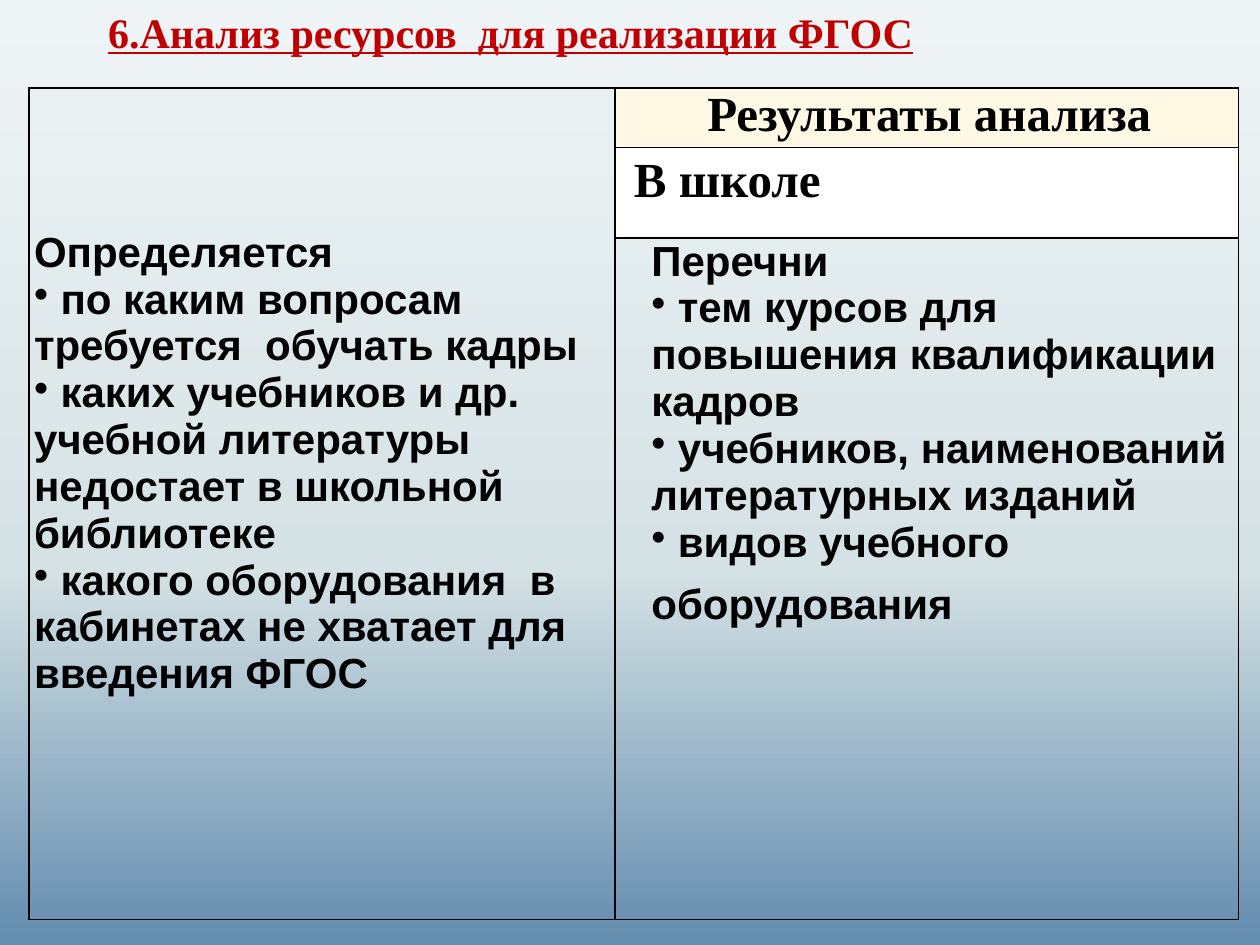
import copy

import pptx
import pptx.dml.color
import pptx.enum.text
import pptx.oxml
import pptx.oxml.ns
import pptx.util

Inches = pptx.util.Inches
Pt = pptx.util.Pt
qn = pptx.oxml.ns.qn
ALIGN = pptx.enum.text.PP_ALIGN
ANCHOR = pptx.enum.text.MSO_ANCHOR
SPACE = 'xmlns:a="http://schemas.openxmlformats.org/drawingml/2006/main"'


def color(code):
    return pptx.dml.color.RGBColor.from_string(code)


def apply(item, values):
    for name, value in values.items():
        setattr(item, name, value)


class Deck:
    serif = "Times New Roman"
    sans = "Arial"
    ink = "000000"

    def __init__(self):
        self.show = pptx.Presentation()
        apply(self.show, {"slide_width": Inches(10), "slide_height": Inches(7.5)})
        self.slide = self.show.slides.add_slide(self.show.slide_layouts[6])

    def back(self, stops):
        fill = self.slide.background.fill
        fill.gradient()
        fill.gradient_angle = 90
        last = list(self.slide.element.iter(qn("a:gs")))[-1]
        last.addnext(copy.deepcopy(last))
        for stop, (place, code) in zip(fill.gradient_stops, stops):
            stop.position = place
            stop.color.rgb = color(code)

    def run(self, para, text, size, face, code=ink, **extra):
        run = para.add_run()
        run.text = text
        apply(run.font, {"size": Pt(size), "name": face, "bold": True, **extra})
        run.font.color.rgb = color(code)

    def title(self, text, box):
        frame = self.slide.shapes.add_textbox(*map(Inches, box)).text_frame
        apply(frame, {"word_wrap": False, "vertical_anchor": ANCHOR.MIDDLE})
        self.run(frame.paragraphs[0], text, 24, self.serif, "C00000", underline=True)

    def table(self, left, top, cols, rows):
        box = map(Inches, (left, top, sum(cols), sum(rows)))
        table = self.slide.shapes.add_table(len(rows), len(cols), *box).table
        apply(table, {"first_row": False, "horz_banding": False})
        for col, width in zip(table.columns, cols):
            col.width = Inches(width)
        for row, height in zip(table.rows, rows):
            row.height = Inches(height)
        sides = ("left", "right", "top", "bottom")
        for cell in table.iter_cells():
            apply(cell, {f"margin_{side}": 0 for side in sides})
            cell.fill.background()
            self.border(cell)
        return table

    def border(self, cell):
        props = cell._tc.get_or_add_tcPr()
        for spot, side in enumerate("LRTB"):
            props.insert(spot, pptx.oxml.parse_xml(
                f'<a:ln{side} {SPACE} w="12700"><a:solidFill>'
                f'<a:srgbClr val="{self.ink}"/></a:solidFill></a:ln{side}>'))

    def paint(self, cell, code):
        cell.fill.solid()
        cell.fill.fore_color.rgb = color(code)

    def indent(self, para, left):
        props = para._p.get_or_add_pPr()
        props.set("marL", str(Inches(left)))
        props.set("indent", "0")
        return props

    def head(self, cell, text, code, align):
        self.paint(cell, code)
        para = cell.text_frame.paragraphs[0]
        para.alignment = align
        self.indent(para, 0.04)
        if align == ALIGN.LEFT:
            self.run(para, " ", 32, self.serif)
        self.run(para, text, 28, self.serif)

    def points(self, cell, lead, items, left):
        frame = cell.text_frame
        for spot, text in enumerate([lead] + items):
            para = frame.add_paragraph() if spot else frame.paragraphs[0]
            props = self.indent(para, left)
            if spot:
                props.append(pptx.oxml.parse_xml(f'<a:buChar {SPACE} char="•"/>'))
                text = " " + text
            self.run(para, text, 24, self.sans)
        return para


def main():
    deck = Deck()
    deck.back([(0, "638CAE"), (0.4, "D5E2E5"), (1, "EFF4F6")])
    deck.title("6.Анализ ресурсов  для реализации ФГОС", (0.76, 0, 6.6, 0.5))

    table = deck.table(0.23, 0.7, [4.65, 4.95], [0.47, 0.72, 5.41])
    topic = table.cell(0, 0)
    topic.merge(table.cell(2, 0))
    topic.margin_top = Inches(1.12)
    deck.points(topic, "Определяется", [
        "по каким вопросам требуется  обучать кадры",
        "каких учебников и др. учебной литературы недостает в школьной библиотеке",
        "какого оборудования  в кабинетах не хватает для введения ФГОС",
    ], 0.04)
    deck.head(table.cell(0, 1), "Результаты анализа", "FEF8E4", ALIGN.CENTER)
    deck.head(table.cell(1, 1), "В школе", "FFFFFF", ALIGN.LEFT)
    last = deck.points(table.cell(2, 1), "Перечни", [
        "тем курсов для повышения квалификации кадров",
        "учебников, наименований литературных изданий",
        "видов учебного оборудования",
    ], 0.29)
    deck.run(last, " ", 32, "Calibri", bold=False)
    deck.show.save("out.pptx")


if __name__ == "__main__":
    main()
